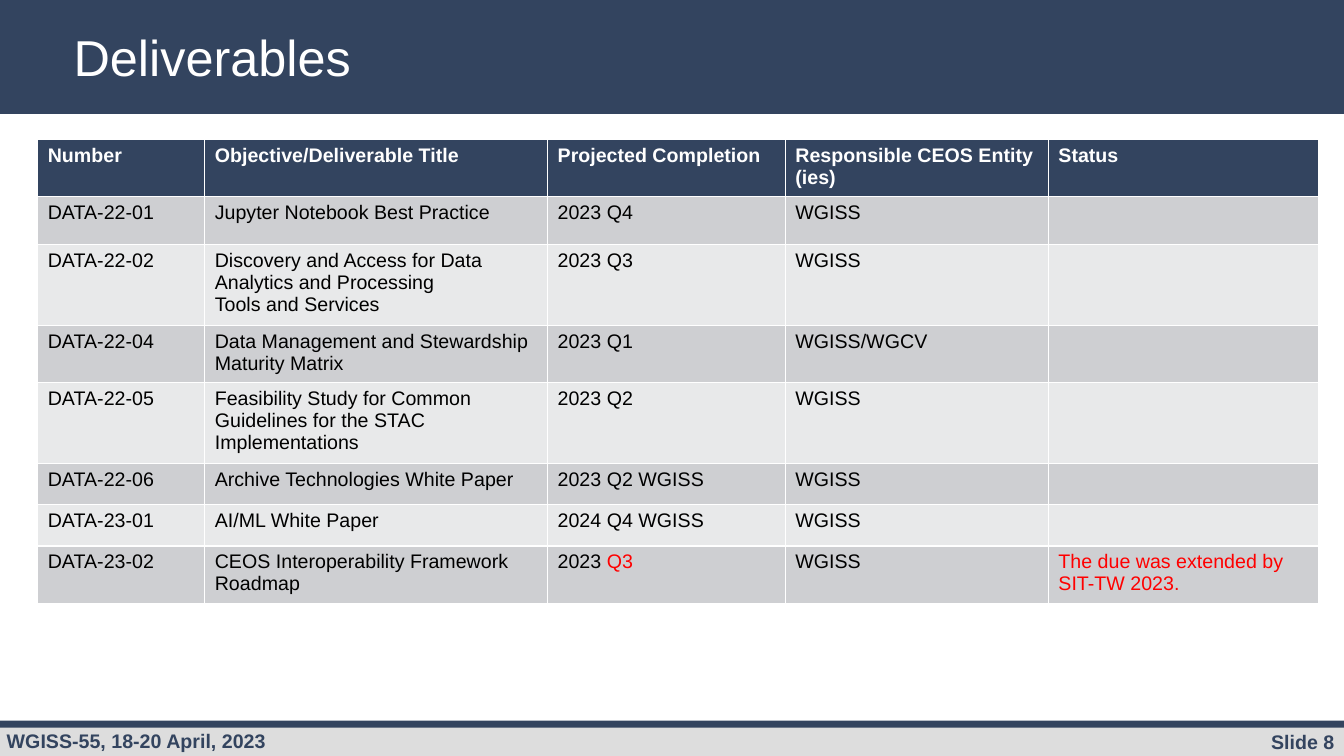
from pptx import Presentation
from pptx.dml.color import RGBColor
from pptx.enum.shapes import MSO_SHAPE
from pptx.enum.text import MSO_ANCHOR, MSO_AUTO_SIZE, PP_ALIGN
from pptx.util import Cm, Pt

NAVY = RGBColor(0x33, 0x44, 0x5F)
PALE = RGBColor(0xDD, 0xDD, 0xDD)
DARK = RGBColor(0xCE, 0xCF, 0xD2)
LIGHT = RGBColor(0xE8, 0xE9, 0xEA)
WHITE = RGBColor(0xFF, 0xFF, 0xFF)
BLACK = RGBColor(0, 0, 0)
RED = RGBColor(0xFF, 0, 0)

WIDTH, HEIGHT = 33.87, 19.05
WIDTHS = [4.21, 8.64, 5.99, 6.63, 6.81]
HEIGHTS = [0.79, 1.22] + [1.04] * 6
ROWS = [
    ["Number", "Objective/Deliverable Title", "Projected Completion",
     "Responsible CEOS Entity (ies)", "Status"],
    ["DATA-22-01", "Jupyter Notebook Best Practice", "2023 Q4", "WGISS", ""],
    ["DATA-22-02",
     "Discovery and Access for Data Analytics and Processing\nTools and Services",
     "2023 Q3", "WGISS", ""],
    ["DATA-22-04", "Data Management and Stewardship Maturity Matrix",
     "2023 Q1", "WGISS/WGCV", ""],
    ["DATA-22-05",
     "Feasibility Study for Common Guidelines for the STAC\nImplementations",
     "2023 Q2", "WGISS", ""],
    ["DATA-22-06", "Archive Technologies White Paper", "2023 Q2 WGISS", "WGISS", ""],
    ["DATA-23-01", "AI/ML White Paper", "2024 Q4 WGISS", "WGISS", ""],
    ["DATA-23-02", "CEOS Interoperability Framework Roadmap", "2023 ", "WGISS",
     "The due was extended by SIT-TW 2023."],
]


class Deck:
    """Holds the font, the sizes and the current slide."""
    face, small, large = "Arial", Pt(14), Pt(36)

    def __init__(self, slide):
        self.slide = slide
        self.shapes = slide.shapes

    def style(self, frame, color, size=None, bold=False):
        for para in frame.paragraphs:
            font = para.font
            font.name, font.size, font.bold = self.face, size or self.small, bold
            font.color.rgb = color

    def bar(self, top, height, color):
        bar = self.shapes.add_shape(MSO_SHAPE.RECTANGLE, 0, Cm(top), Cm(WIDTH), Cm(height))
        bar.shadow.inherit = False
        bar.fill.solid()
        bar.fill.fore_color.rgb = color
        bar.line.fill.background()

    def title(self, text):
        """Fill the title and bring it in front of the bars."""
        title = self.shapes.title
        title.left, title.top, title.width, title.height = Cm(1.6), Cm(0.53), Cm(32.26), Cm(1.8)
        frame = title.text_frame
        frame.text = text
        frame.auto_size = MSO_AUTO_SIZE.NONE
        frame.vertical_anchor = MSO_ANCHOR.TOP
        frame.paragraphs[0].alignment = PP_ALIGN.LEFT
        self.style(frame, WHITE, self.large)
        title.element.getparent().append(title.element)

    def label(self, text, left, top, width, align):
        box = self.shapes.add_textbox(Cm(left), Cm(top), Cm(width), Cm(0.86))
        frame = box.text_frame
        frame.word_wrap = True
        frame.text = text
        frame.paragraphs[0].alignment = align
        self.style(frame, NAVY, bold=True)

    def table(self, rows, left, top):
        table = self.shapes.add_table(len(rows), len(WIDTHS), Cm(left), Cm(top),
                                      Cm(sum(WIDTHS)), Cm(sum(HEIGHTS))).table
        for col, width in zip(table.columns, WIDTHS):
            col.width = Cm(width)
        for row, height in zip(table.rows, HEIGHTS):
            row.height = Cm(height)
        for r, row in enumerate(rows):
            head = r == 0
            for c, text in enumerate(row):
                cell = table.cell(r, c)
                cell.text = text
                cell.fill.solid()
                cell.fill.fore_color.rgb = NAVY if head else DARK if r % 2 else LIGHT
                self.style(cell.text_frame, WHITE if head else BLACK, bold=head)
        return table


def main():
    prs = Presentation()
    prs.slide_width, prs.slide_height = Cm(WIDTH), Cm(HEIGHT)
    deck = Deck(prs.slides.add_slide(prs.slide_layouts[5]))
    deck.bar(0, 2.87, NAVY)
    deck.bar(18.26, 0.79, PALE)
    deck.bar(18.16, 0.18, NAVY)
    deck.label("WGISS-55, 18-20 April, 2023", -0.08, 18.24, 13.69, PP_ALIGN.LEFT)
    deck.title("Deliverables")
    deck.label("Slide 8", 28.52, 18.26, 5.36, PP_ALIGN.RIGHT)

    table = deck.table(ROWS, 0.95, 3.51)
    last = len(ROWS) - 1
    due = table.cell(last, 2).text_frame.paragraphs[0].add_run()
    due.text = "Q3"
    due.font.color.rgb = RED
    deck.style(table.cell(last, 4).text_frame, RED)
    prs.save("out.pptx")


if __name__ == "__main__":
    main()
